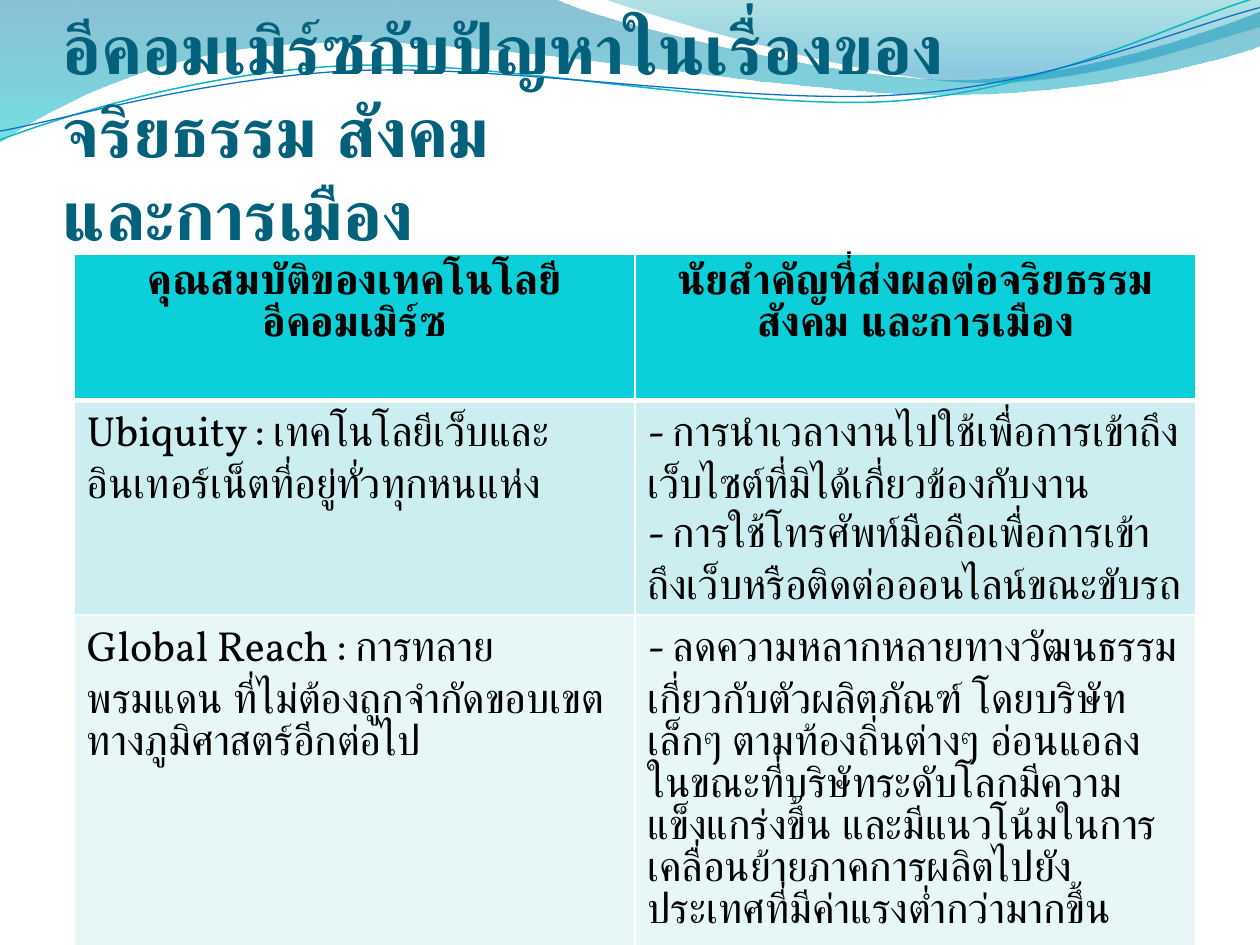
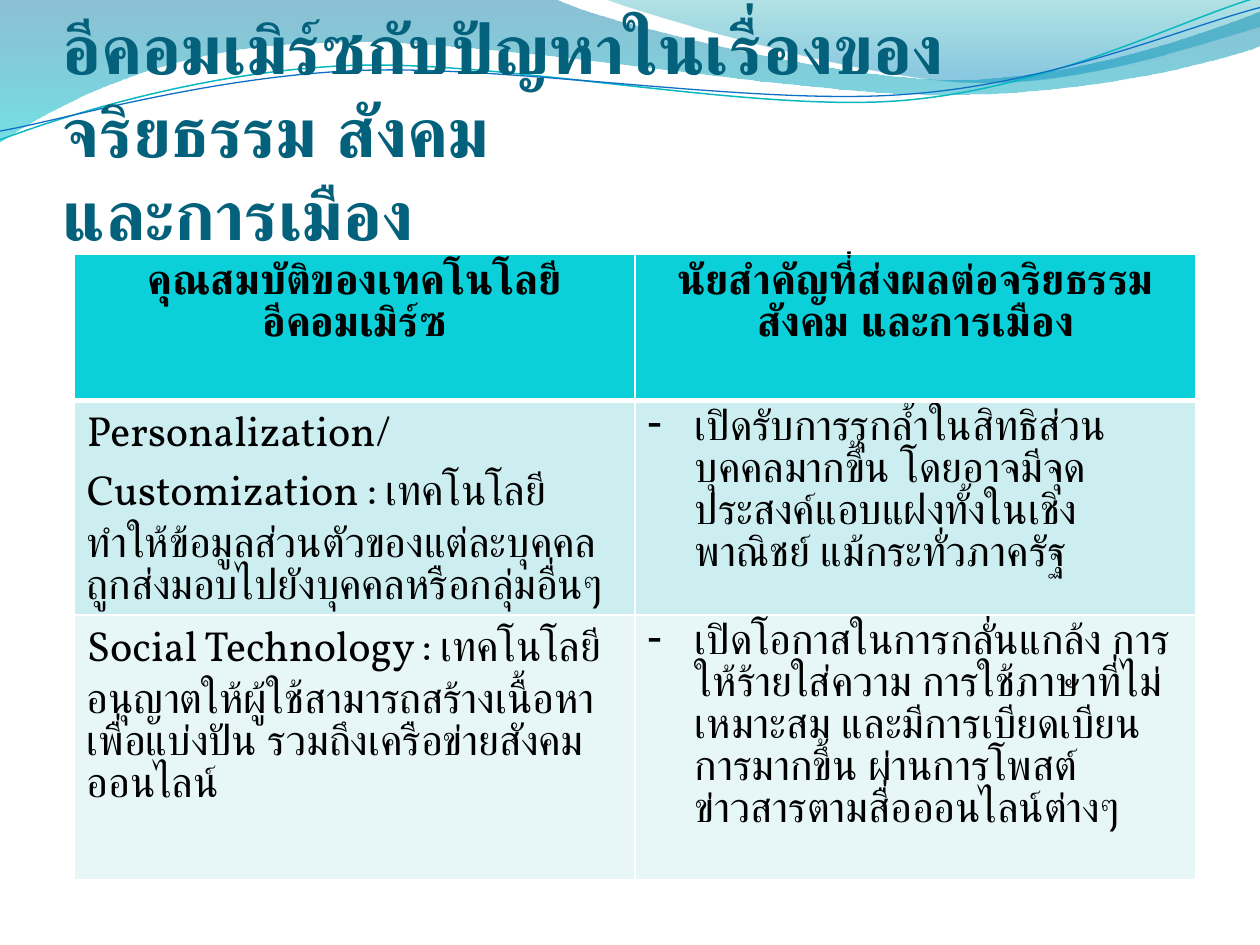
from math import cos, radians, sin

from lxml.etree import SubElement
from pptx import Presentation
from pptx.dml.color import RGBColor
from pptx.enum.text import MSO_ANCHOR, PP_ALIGN
from pptx.oxml.ns import qn
from pptx.util import Inches, Pt

COLS, ROWS = 100, 75
CELL = Inches(0.1)
PAGE = (0, 0, COLS, ROWS)
HEAD = (5, 7.7, 90, 12.5)
GRID = (5.9, 20.2, 89)
ROW = 11.6
TILT = 357.3
DENT = Pt(27)

HUES = {
    "title": "04617B", "ink": "000000", "rule": "FFFFFF",
    "head": "0BD0D9", "odd": "CCEEF1", "even": "E7F7F8",
    "deep": "0074A1", "aqua": "00C6CF", "teal": "00A1A9", "sky": "008BBF",
    "thin": "0AB8BF", "blue": "0F6FC6",
}

# Each wave: start point, then segments of one (line) or three (curve) points.
# Bands have two gradient stops: hue, place, opacity in percent.
BANDS = [
    ((0, 0), [
        [(44, -0.1)],
        [(47.6, 1.7), (66.4, 6.3), (75.8, 6.3)],
        [(85.3, 6.3), (95.8, 2.6), (100, 0.9)],
        [(100.1, 3.6)],
        [(98.3, 4.4), (87, 7.6), (74.6, 7.5)],
        [(62.2, 7.5), (38.2, 2.8), (25.7, 3.4)],
        [(12.9, 3.6), (4.6, 8.3), (-0.1, 11.3)],
    ], [("deep", 0, 45), ("aqua", 1, 55)]),
    ((47.9, -0.1), [
        [(50.9, 1.1), (68.2, 6.2), (76.9, 6.5)],
        [(85.6, 6.9), (96.1, 3.2), (100, 2.1)],
        [(100, 0)],
    ], [("teal", 0, 30), ("sky", 0.8, 45)]),
]
# Lines end with hue, width and the centre they are tilted about.
LINES = [
    ((0, 11.1), [
        [(4.8, 9.3), (15.8, 5.7), (27.7, 5.2)],
        [(39.5, 4.7), (59.3, 8.9), (71.3, 8)],
        [(83.3, 7.1), (93.8, 1.5), (99.8, -0.2)],
    ], "thin", 0.85, (49.9, 5.75)),
    ((0, 10.4), [
        [(4.7, 9.6), (16.4, 6.1), (28.3, 5.6)],
        [(40.3, 5.1), (59.7, 8.4), (71.7, 7.5)],
        [(83.6, 6.7), (94.1, 2.1), (100, 0.6)],
    ], "blue", 0.75, (49.95, 5.9)),
]

TITLE = "อีคอมเมิร์ซกับปัญหาในเรื่องของจริยธรรม สังคม \vและการเมือง"
TOPS = ["คุณสมบัติของเทคโนโลยีอีคอมเมิร์ซ",
        "นัยสำคัญที่ส่งผลต่อจริยธรรม สังคม และการเมือง"]
REACH = [
    ["Ubiquity : เทคโนโลยีเว็บและอินเทอร์เน็ตที่อยู่ทั่วทุกหนแห่ง",
     "- การนำเวลางานไปใช้เพื่อการเข้าถึงเว็บไซต์ที่มิได้เกี่ยวข้องกับงาน\n"
     "- การใช้โทรศัพท์มือถือเพื่อการเข้าถึงเว็บหรือติดต่อออนไลน์ขณะขับรถ"],
    ["Global Reach : การทลายพรมแดน ที่ไม่ต้องถูกจำกัดขอบเขตทางภูมิศาสตร์อีกต่อไป",
     "- ลดความหลากหลายทางวัฒนธรรมเกี่ยวกับตัวผลิตภัณฑ์ "
     "โดยบริษัทเล็กๆ ตามท้องถิ่นต่างๆ อ่อนแอลง "
     "ในขณะที่บริษัทระดับโลกมีความแข็งแกร่งขึ้น "
     "และมีแนวโน้มในการเคลื่อนย้ายภาคการผลิตไปยังประเทศที่มีค่าแรงต่ำกว่ามากขึ้น"],
]
SOCIAL = [
    ["Personalization/Customization : เทคโนโลยีทำให้ข้อมูลส่วนตัวของแต่ละบุคคล "
     "ถูกส่งมอบไปยังบุคคลหรือกลุ่มอื่นๆ",
     "เปิดรับการรุกล้ำในสิทธิส่วนบุคคลมากขึ้น "
     "โดยอาจมีจุดประสงค์แอบแฝงทั้งในเชิงพาณิชย์ แม้กระทั่วภาครัฐ"],
    ["Social Technology : เทคโนโลยีอนุญาตให้ผู้ใช้สามารถสร้างเนื้อหาเพื่อแบ่งปัน "
     "รวมถึงเครือข่ายสังคมออนไลน์",
     "เปิดโอกาสในการกลั่นแกล้ง การให้ร้ายใส่ความ การใช้ภาษาที่ไม่เหมาะสม "
     "และมีการเบียดเบียนการมากขึ้น ผ่านการโพสต์ข่าวสารตามสื่อออนไลน์ต่างๆ"],
]


def hue(name):
    return RGBColor.from_string(HUES[name])


def units(*cells):
    return [round(cell * CELL) for cell in cells]


def write(frame, text, size=24, font="Vollkorn", color="ink", bold=False,
          align=PP_ALIGN.LEFT, dash=False):
    """Fill a text frame; each line of text is a paragraph."""
    frame.word_wrap = True
    frame.text = text
    for para in frame.paragraphs:
        para.alignment = align
        if dash:
            props = para._p.get_or_add_pPr()
            props.set("marL", str(DENT))
            props.set("indent", str(-DENT))
            SubElement(props, qn("a:buFontTx"))
            SubElement(props, qn("a:buChar"), char="-")
        for run in para.runs:
            face = run.font
            face.size, face.name, face.bold = Pt(size), font, bold
            face.color.rgb = hue(color)


def turn(point, hub, angle):
    x, y = point[0] - hub[0], point[1] - hub[1]
    c, s = cos(radians(angle)), sin(radians(angle))
    return hub[0] + x * c - y * s, hub[1] + x * s + y * c


def wave(shapes, box, start, parts, close, hub=None):
    """Draw one wave; with a hub, as a level shape that is then tilted."""
    dots = [start, *(dot for part in parts for dot in part)]
    if hub:
        dots = [turn(dot, hub, -TILT) for dot in dots]
    first, *rest = [units(box[0] + x, box[1] + y) for x, y in dots]
    pen = shapes.build_freeform(*first)
    pen.add_line_segments(rest, close=close)
    shape = pen.convert_to_shape()
    shape.shadow.inherit = False
    legs = iter(list(shape._element.iter(qn("a:lnTo"))))
    for part in parts:
        run = [next(legs) for _ in part]
        if len(run) == 3:
            run[0].tag = qn("a:cubicBezTo")
            for leg in run[1:]:
                run[0].append(leg[0])
                leg.getparent().remove(leg)
    if hub:
        shape.rotation = TILT
    return shape


def waves(slide, box):
    for start, parts, stops in BANDS:
        band = wave(slide.shapes, box, start, parts, True)
        band.line.fill.background()
        band.fill.gradient()
        band.fill.gradient_angle = 270
        for stop, (name, place, alpha) in zip(band.fill.gradient_stops, stops):
            stop.position = place
            stop.color.rgb = hue(name)
            tone = stop._gs.find(qn("a:srgbClr"))
            SubElement(tone, qn("a:alpha"), val=str(alpha * 1000))
    pair = slide.shapes.add_group_shape().shapes
    for start, parts, name, width, hub in LINES:
        curve = wave(pair, box, start, parts, False, hub)
        curve.fill.background()
        curve.line.color.rgb = hue(name)
        curve.line.width = Pt(width)


def title(slide, box):
    frame = slide.shapes.add_textbox(*units(*box)).text_frame
    frame.margin_left = frame.margin_right = frame.margin_bottom = 0
    frame.vertical_anchor = MSO_ANCHOR.BOTTOM
    write(frame, TITLE, size=39.6, font="Calibri", color="title", bold=True)


def edge(cell, base):
    """Rule all four sides of a cell, the bottom one base points wide."""
    props = cell._tc.get_or_add_tcPr()
    for side, width in (("L", 1), ("R", 1), ("T", 1), ("B", base)):
        line = SubElement(props, qn("a:ln" + side), w=str(Pt(width)))
        fill = SubElement(line, qn("a:solidFill"))
        SubElement(fill, qn("a:srgbClr"), val=HUES["rule"])


def table(slide, box, body, dash):
    rows = [TOPS, *body]
    frame = slide.shapes.add_table(len(rows), len(TOPS), *units(*box))
    grid = frame.table
    for r, (texts, tint) in enumerate(zip(rows, ("head", "odd", "even"))):
        top = r == 0
        grid.rows[r].height = units(ROW)[0]
        for c, text in enumerate(texts):
            cell = grid.cell(r, c)
            edge(cell, 3 if top else 1)
            cell.fill.solid()
            cell.fill.fore_color.rgb = hue(tint)
            write(cell.text_frame, text, bold=top,
                  align=PP_ALIGN.CENTER if top else PP_ALIGN.LEFT,
                  dash=dash and not top and c == 1)
    frame.height = units(box[3])[0]


def main():
    deck = Presentation()
    deck.slide_width, deck.slide_height = units(COLS, ROWS)
    for body, high, dash in ((REACH, 53.6, False), (SOCIAL, 41.6, True)):
        slide = deck.slides.add_slide(deck.slide_layouts[6])
        waves(slide, PAGE)
        title(slide, HEAD)
        table(slide, (*GRID, high), body, dash)
    deck.save("out.pptx")


if __name__ == "__main__":
    main()
